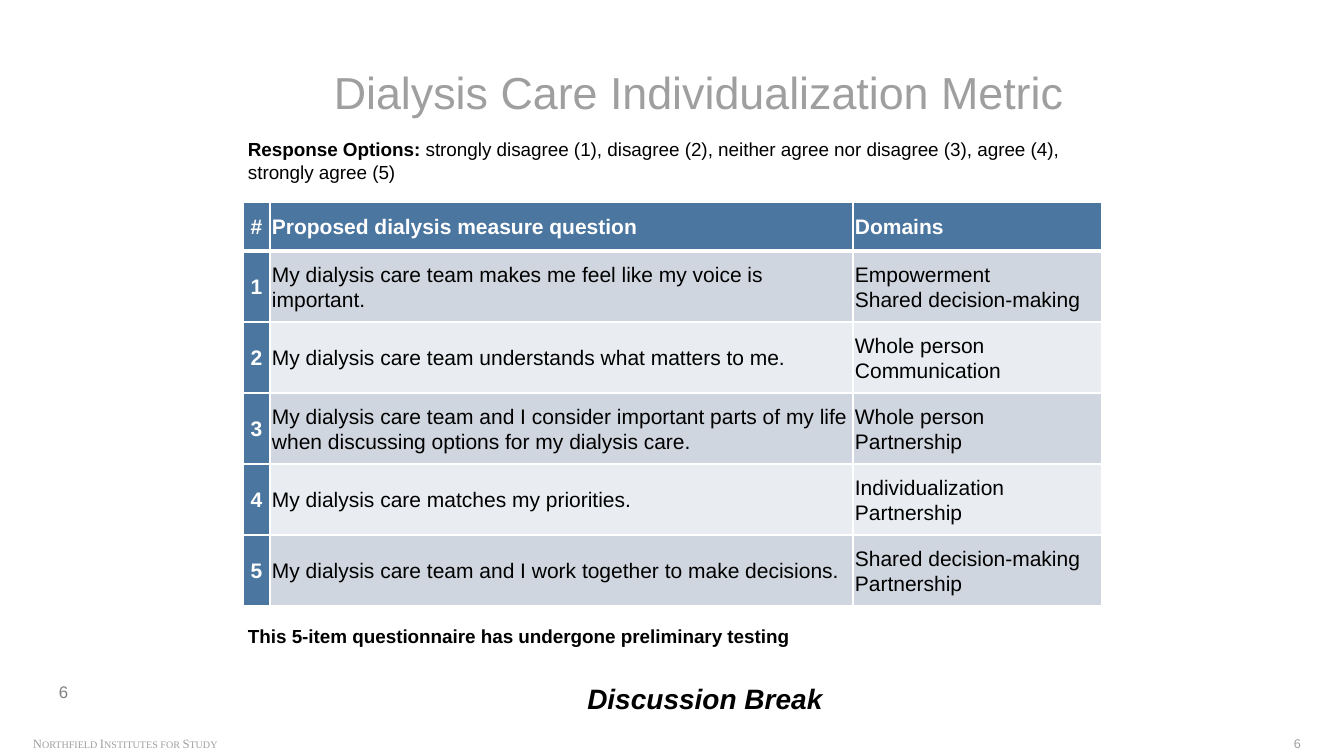
"""Build the dialysis care individualization metric slide."""
import pptx
import pptx.dml.color
import pptx.enum.text
import pptx.oxml
import pptx.oxml.ns
import pptx.util

TITLE = "Dialysis Care Individualization Metric"
RESPONSE_LABEL = "Response Options: "
RESPONSE_OPTIONS = ("strongly disagree (1), disagree (2), neither agree nor disagree (3), "
                    "agree (4), strongly agree (5)")
TESTING_NOTE = "This 5-item questionnaire has undergone preliminary testing"
CLOSING = "Discussion Break"
ORGANIZATION = "Northfield Institutes for Study"
PAGE = "6"
HEADINGS = ("#", "Proposed dialysis measure question", "Domains")
QUESTIONS = [
    ("My dialysis care team makes me feel like my voice is important.",
     ("Empowerment", "Shared decision-making")),
    ("My dialysis care team understands what matters to me.",
     ("Whole person", "Communication")),
    ("My dialysis care team and I consider important parts of my life "
     "when discussing options for my dialysis care.",
     ("Whole person", "Partnership")),
    ("My dialysis care matches my priorities.",
     ("Individualization", "Partnership")),
    ("My dialysis care team and I work together to make decisions.",
     ("Shared decision-making", "Partnership")),
]

THEME = {
    "font": "Arial", "footer_font": "Times New Roman",
    "ink": "000000", "white": "FFFFFF", "muted": "9F9F9F", "page": "808080",
    "header": "4B76A0", "bands": ("D0D6DF", "E9ECF0"),
    "title_size": 32, "table_size": 15, "body_size": 13.5,
    "closing_size": 20, "page_size": 12, "footer_size": 9,
}
PX_PER_INCH = 100.8
COLUMN_WIDTHS = (27, 583, 249)
HEADER_HEIGHT, QUESTION_HEIGHT = 49, 71
TABLE_LEFT, TABLE_TOP = 243, 202

CENTER = pptx.enum.text.PP_ALIGN.CENTER
LEFT = pptx.enum.text.PP_ALIGN.LEFT
TOP = pptx.enum.text.MSO_ANCHOR.TOP
MIDDLE = pptx.enum.text.MSO_ANCHOR.MIDDLE
BOTTOM = pptx.enum.text.MSO_ANCHOR.BOTTOM


def px(length):
    return pptx.util.Inches(length / PX_PER_INCH)


def rgb(color):
    return pptx.dml.color.RGBColor.from_string(color)


def write(paragraph, text, *, size, color=THEME["ink"], font=THEME["font"], bold=False,
          italic=False, small_caps=False, align=LEFT, line_spacing=None):
    paragraph.alignment = align
    if line_spacing:
        paragraph.line_spacing = line_spacing
    run = paragraph.add_run()
    run.text = text
    run.font.name, run.font.size = font, pptx.util.Pt(size)
    run.font.bold, run.font.italic = bold, italic
    run.font.color.rgb = rgb(color)
    if small_caps:
        run._r.get_or_add_rPr().set("cap", "small")


def add_box(slide, bounds, *, anchor=TOP, inset=True, wrap=True):
    frame = slide.shapes.add_textbox(*map(px, bounds)).text_frame
    frame.word_wrap = wrap
    frame.vertical_anchor = anchor
    if not inset:
        frame.margin_left = frame.margin_right = frame.margin_top = frame.margin_bottom = 0
    return frame.paragraphs[0]


def set_borders(cell, widths):
    properties = cell._tc.get_or_add_tcPr()
    for side, points in zip("LRTB", widths):
        properties.append(pptx.oxml.parse_xml(
            f'<a:ln{side} {pptx.oxml.ns.nsdecls("a")} w="{pptx.util.Pt(points)}">'
            f'<a:solidFill><a:srgbClr val="{THEME["white"]}"/></a:solidFill></a:ln{side}>'))


def fill_cell(cell, lines, row, column):
    is_header = row == 0
    is_label = is_header or column == 0
    set_borders(cell, (1, 1, 3 if row == 1 else 1, 3 if is_header else 1))
    cell.fill.solid()
    cell.fill.fore_color.rgb = rgb(THEME["header"] if is_label else THEME["bands"][(row - 1) % 2])
    cell.vertical_anchor = MIDDLE
    cell.margin_left = cell.margin_right = px(2)
    cell.margin_top = cell.margin_bottom = 0
    frame = cell.text_frame
    for index, line in enumerate(lines):
        paragraph = frame.add_paragraph() if index else frame.paragraphs[0]
        write(paragraph, line, size=THEME["table_size"], bold=is_label,
              color=THEME["white"] if is_label else THEME["ink"],
              align=CENTER if column == 0 else LEFT, line_spacing=1.07)


def add_questions(slide):
    rows = [[(heading,) for heading in HEADINGS]]
    rows += [[(str(number),), (question,), domains]
             for number, (question, domains) in enumerate(QUESTIONS, 1)]
    heights = [HEADER_HEIGHT] + [QUESTION_HEIGHT] * len(QUESTIONS)
    table = slide.shapes.add_table(
        len(rows), len(HEADINGS), px(TABLE_LEFT), px(TABLE_TOP),
        px(sum(COLUMN_WIDTHS)), px(sum(heights))).table
    for column, width in zip(table.columns, COLUMN_WIDTHS):
        column.width = px(width)
    for row, height in zip(table.rows, heights):
        row.height = px(height)
    for row, entries in enumerate(rows):
        for column, lines in enumerate(entries):
            fill_cell(table.cell(row, column), lines, row, column)


def main():
    deck = pptx.Presentation()
    deck.slide_width, deck.slide_height = px(1344), px(756)
    slide = deck.slides.add_slide(deck.slide_layouts[6])

    write(add_box(slide, (33, 736, 197, 15), inset=False, wrap=False), ORGANIZATION,
          size=THEME["footer_size"], color=THEME["muted"], font=THEME["footer_font"],
          small_caps=True)
    write(add_box(slide, (95, 64, 1208, 54), anchor=BOTTOM, inset=False), TITLE,
          size=THEME["title_size"], color=THEME["muted"], align=CENTER)
    add_questions(slide)
    response = add_box(slide, (238, 133, 879, 79))
    write(response, RESPONSE_LABEL, size=THEME["body_size"], bold=True)
    write(response, RESPONSE_OPTIONS, size=THEME["body_size"])
    write(add_box(slide, (238, 620, 570, 56)), TESTING_NOTE,
          size=THEME["body_size"], bold=True)
    write(add_box(slide, (1294, 736, 15, 15), inset=False), PAGE,
          size=THEME["footer_size"], color=THEME["muted"])
    write(add_box(slide, (49, 672, 151, 40), anchor=MIDDLE), PAGE,
          size=THEME["page_size"], color=THEME["page"])
    write(add_box(slide, (576, 677, 258, 67)), CLOSING,
          size=THEME["closing_size"], bold=True, italic=True, align=CENTER)
    deck.save("out.pptx")


if __name__ == "__main__":
    main()
